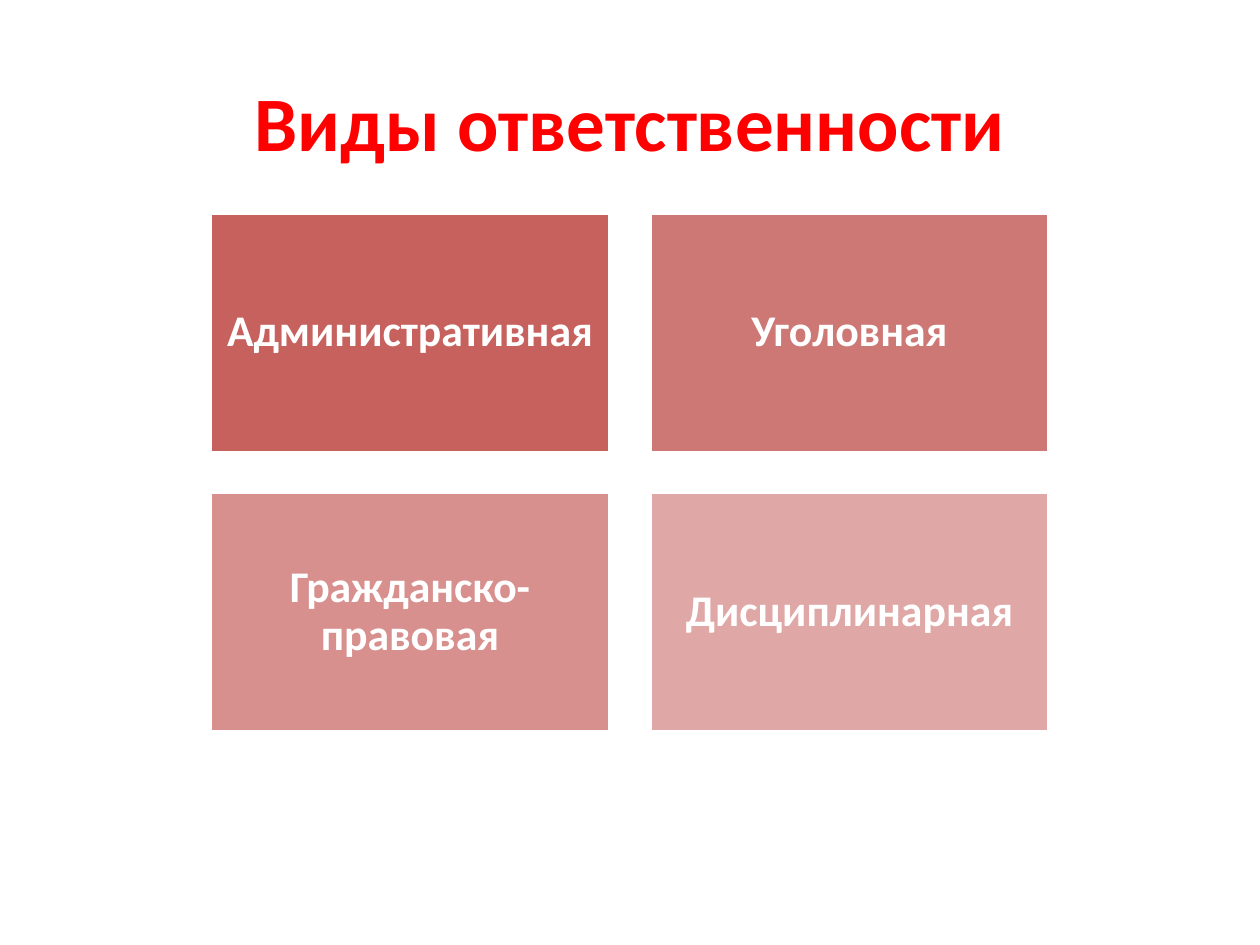
from dataclasses import dataclass

from lxml.etree import SubElement
from pptx import Presentation
from pptx.dml.color import RGBColor
from pptx.enum.shapes import MSO_SHAPE
from pptx.enum.text import MSO_ANCHOR, PP_ALIGN
from pptx.oxml.ns import qn
from pptx.util import Cm, Pt

LEFT, TOP = 4.24, 4.29
WIDTH, HEIGHT = 8.05, 4.83
GAP = 0.81
INSET = Cm(0.25)


@dataclass
class Tile:
    """One kind of liability and the opacity of its fill in percent."""

    label: str
    alpha: int


TILES = [
    Tile("Административная", 90),
    Tile("Уголовная", 77),
    Tile("Гражданско- правовая", 63),
    Tile("Дисциплинарная", 50),
]


def color(code: str) -> RGBColor:
    """Turn a hex string into a colour."""
    return RGBColor.from_string(code)


def write(shape, text: str, size: int, code: str) -> None:
    """Put centred bold text into a shape."""
    frame = shape.text_frame
    frame.text = text
    frame.word_wrap = True
    frame.vertical_anchor = MSO_ANCHOR.MIDDLE
    para = frame.paragraphs[0]
    para.alignment = PP_ALIGN.CENTER
    for run in para.runs:
        run.font.name = "Calibri"
        run.font.size = Pt(size)
        run.font.bold = True
        run.font.color.rgb = color(code)


def draw_tile(slide, tile: Tile, row: int, col: int) -> None:
    """Draw a tile in its cell of the grid."""
    left = LEFT + col * (WIDTH + GAP)
    top = TOP + row * (HEIGHT + GAP)
    box = slide.shapes.add_shape(
        MSO_SHAPE.RECTANGLE, Cm(left), Cm(top), Cm(WIDTH), Cm(HEIGHT)
    )
    box.shadow.inherit = False
    box.fill.solid()
    box.fill.fore_color.rgb = color("C0504D")
    tint = box.fill._xPr.find(qn("a:solidFill"))[0]
    SubElement(tint, qn("a:alpha"), val=str(tile.alpha * 1000))
    box.line.color.rgb = color("FFFFFF")
    box.line.width = Pt(2)
    write(box, tile.label, 25, "FFFFFF")
    frame = box.text_frame
    frame.margin_left = frame.margin_right = INSET
    frame.margin_top = frame.margin_bottom = INSET
    frame.paragraphs[0].line_spacing = 0.9


def main() -> None:
    """Build the slide and save it."""
    deck = Presentation()
    deck.slide_width, deck.slide_height = Cm(25.4), Cm(19.05)
    slide = deck.slides.add_slide(deck.slide_layouts[6])
    title = slide.shapes.add_textbox(Cm(1.27), Cm(0.84), Cm(22.86), Cm(3.18))
    write(title, "Виды ответственности", 44, "FF0000")
    for index, tile in enumerate(TILES):
        row, col = divmod(index, 2)
        draw_tile(slide, tile, row, col)
    deck.save("out.pptx")


if __name__ == "__main__":
    main()
